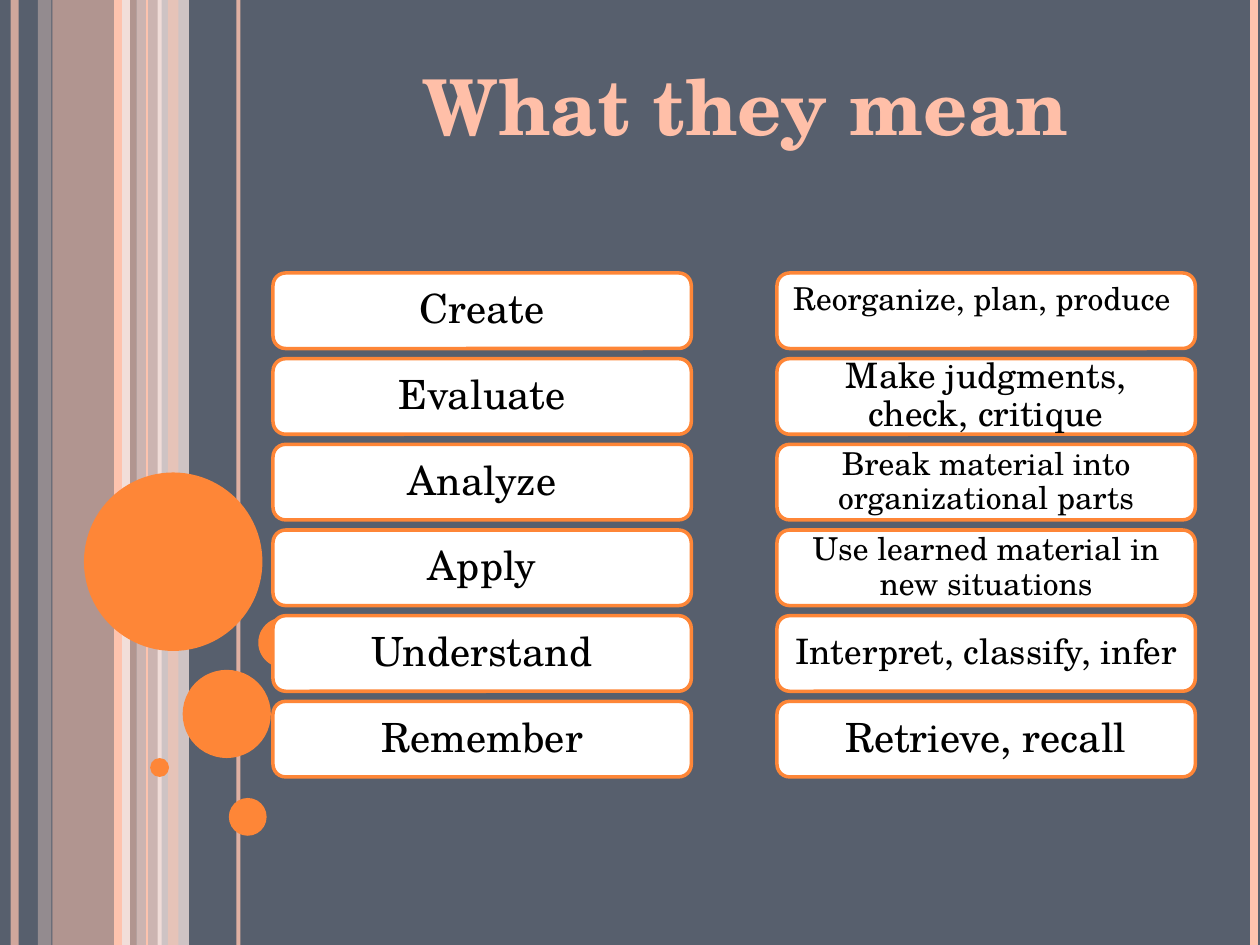
from lxml import etree
from pptx import Presentation
from pptx.dml.color import RGBColor
from pptx.enum.shapes import MSO_CONNECTOR, MSO_SHAPE
from pptx.enum.text import MSO_ANCHOR, MSO_AUTO_SIZE, PP_ALIGN
from pptx.oxml.ns import qn
from pptx.util import Inches, Pt

STRAIGHT = MSO_CONNECTOR.STRAIGHT
RECTANGLE, OVAL, ROUNDED = MSO_SHAPE.RECTANGLE, MSO_SHAPE.OVAL, MSO_SHAPE.ROUNDED_RECTANGLE
TOP, MIDDLE = MSO_ANCHOR.TOP, MSO_ANCHOR.MIDDLE
LEFT, CENTER = PP_ALIGN.LEFT, PP_ALIGN.CENTER
NO_AUTOFIT = MSO_AUTO_SIZE.NONE

COLORS = {
    "background": "575F6D",
    "title": "FFBFA8",
    "peach": "FEC3AE",
    "blush": "FFD9CE",
    "cream": "FFEDE8",
    "orange": "FE8637",
    "card": "FFFFFF",
    "text": "000000",
}
FONT = "TeX Gyre Schola"
GRID_COLUMNS, GRID_ROWS = 120, 90

STRIPES = [
    ("bar", 5, 8, "peach", 54),
    ("bar", 3.6, 1.3, "blush", 36),
    ("bar", 13, 2.4, "blush", 70),
    ("bar", 15, 3, "cream", 71),
    ("rule", 1.4, 4.5, "peach", 73),
    ("rule", 12, 4.5, "cream", 83),
    ("rule", 11.2, 4.5, "peach", 100),
    ("rule", 22.7, 2.25, "peach", 82),
    ("rule", 14, 0.75, "peach", 100),
    ("bar", 16, 1, "peach", 51),
]
BUBBLES = [
    (8, 45, 17),
    (17.4, 63.8, 8.4),
    (14.3, 72.2, 1.8),
    (21.8, 76, 3.6),
    (24.6, 58.8, 4.8),
]
LEVELS = [
    ("Create", "Reorganize, plan, produce", 18),
    ("Evaluate", "Make judgments, check, critique", 20),
    ("Analyze", "Break material into organizational parts", 18),
    ("Apply", "Use learned material in new situations", 18),
    ("Understand", "Interpret, classify, infer", 20),
    ("Remember", "Retrieve, recall", 23),
]
CARD_LEFT, CARD_TOP = 26, 26
CARD_WIDTH, CARD_HEIGHT = 39.84, 7.2
CARD_COLUMN_STEP, CARD_ROW_STEP = 48, 8.16


class SlideBuilder:
    def __init__(self, presentation):
        self.column = presentation.slide_width / GRID_COLUMNS
        self.row = presentation.slide_height / GRID_ROWS
        self.slide = presentation.slides.add_slide(presentation.slide_layouts[5])
        self.paint(self.slide.background.fill, "background")

    def place(self, left, top, width, height):
        return (round(left * self.column), round(top * self.row),
                round(width * self.column), round(height * self.row))

    def paint(self, fill, color):
        fill.solid()
        fill.fore_color.rgb = RGBColor.from_string(COLORS[color])

    def fade(self, properties, opacity):
        if opacity < 100:
            tint = next(properties.iter(qn("a:srgbClr")))
            etree.SubElement(tint, qn("a:alpha"), val=str(opacity * 1000))

    def set_text(self, frame, text, size, color, align=CENTER, anchor=MIDDLE, bold=False):
        frame.text = text
        frame.word_wrap = True
        frame.auto_size = NO_AUTOFIT
        frame.vertical_anchor = anchor
        paragraph = frame.paragraphs[0]
        paragraph.alignment = align
        paragraph.line_spacing = 1.0 if bold else 0.9
        font = paragraph.runs[0].font
        font.name, font.size, font.bold = FONT, Pt(size), bold
        font.color.rgb = RGBColor.from_string(COLORS[color])

    def title(self, text, left, top, width, height):
        heading = self.slide.shapes.title
        heading.left, heading.top, heading.width, heading.height = self.place(
            left, top, width, height)
        self.set_text(heading.text_frame, text, 44, "title", bold=True)

    def shape(self, kind, box, color, opacity=100):
        shape = self.slide.shapes.add_shape(kind, *self.place(*box))
        shape.shadow.inherit = False
        self.paint(shape.fill, color)
        self.fade(shape._element.spPr, opacity)
        shape.line.fill.background()
        return shape

    def bar(self, left, width, color, opacity):
        self.shape(RECTANGLE, (left, 0, width, GRID_ROWS), color, opacity)

    def rule(self, left, weight, color, opacity):
        x, top, _, bottom = self.place(left, 0, 0, GRID_ROWS)
        rule = self.slide.shapes.add_connector(STRAIGHT, x, top, x, bottom)
        rule.line.width = Pt(weight)
        self.paint(rule.line.fill, color)
        properties = rule._element.spPr
        self.fade(properties, opacity)
        etree.SubElement(properties, qn("a:effectLst"))

    def bubble(self, left, top, diameter):
        self.shape(OVAL, (left, top, diameter, diameter), "orange")

    def card(self, column, row, text, size, align=CENTER, anchor=MIDDLE):
        left = CARD_LEFT + column * CARD_COLUMN_STEP
        top = CARD_TOP + row * CARD_ROW_STEP
        card = self.shape(ROUNDED, (left, top, CARD_WIDTH, CARD_HEIGHT), "card")
        self.paint(card.line.fill, "orange")
        card.line.width = Pt(2)
        self.set_text(card.text_frame, text, size, "text", align, anchor)


def main():
    presentation = Presentation()
    presentation.slide_width, presentation.slide_height = Inches(10), Inches(7.5)
    builder = SlideBuilder(presentation)
    stripe_makers = {"bar": builder.bar, "rule": builder.rule}
    for kind, left, thickness, color, opacity in STRIPES:
        stripe_makers[kind](left, thickness, color, opacity)
    for bubble in BUBBLES:
        builder.bubble(*bubble)
    builder.rule(119.4, 4.5, "peach", 100)
    builder.title("What they mean", 22, 5, 98, 10)
    for row, (level, meaning, size) in enumerate(LEVELS):
        builder.card(0, row, level, 23)
        align, anchor = (LEFT, TOP) if row == 0 else (CENTER, MIDDLE)
        builder.card(1, row, meaning, size, align, anchor)
    presentation.save("out.pptx")


if __name__ == "__main__":
    main()
